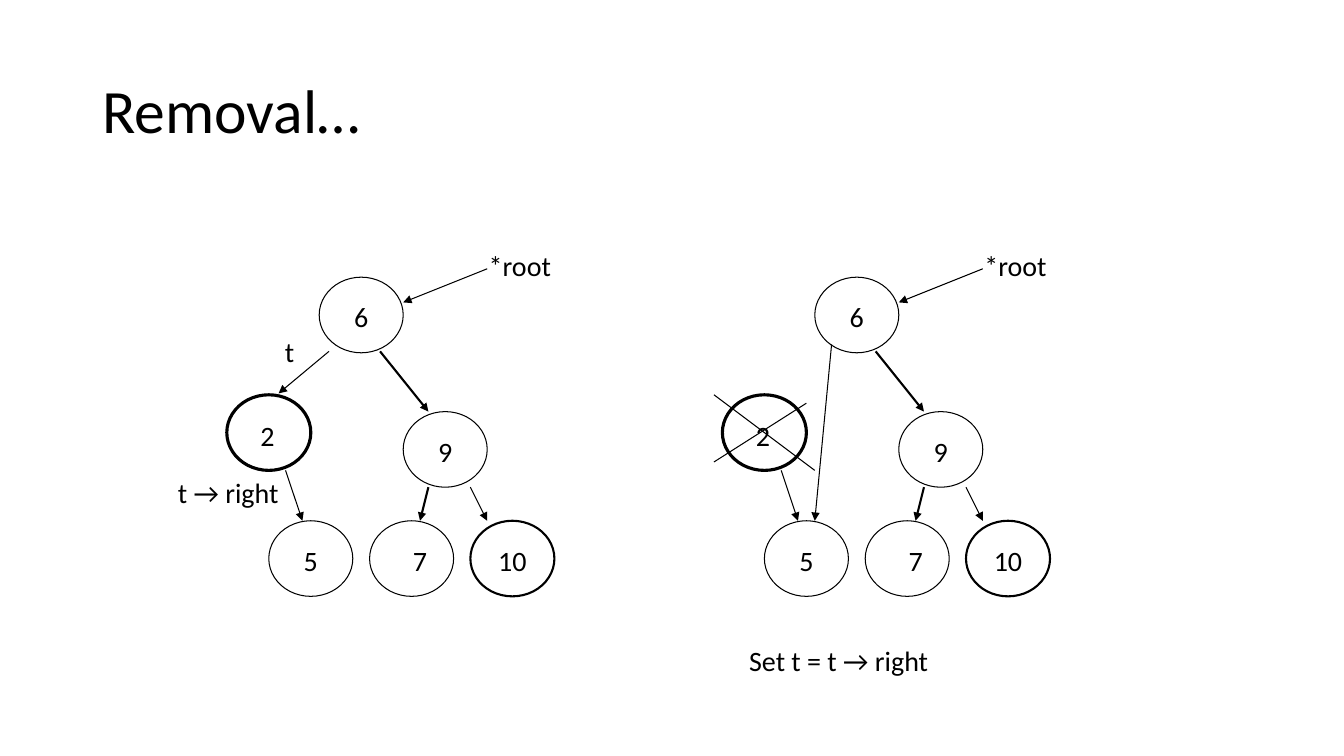
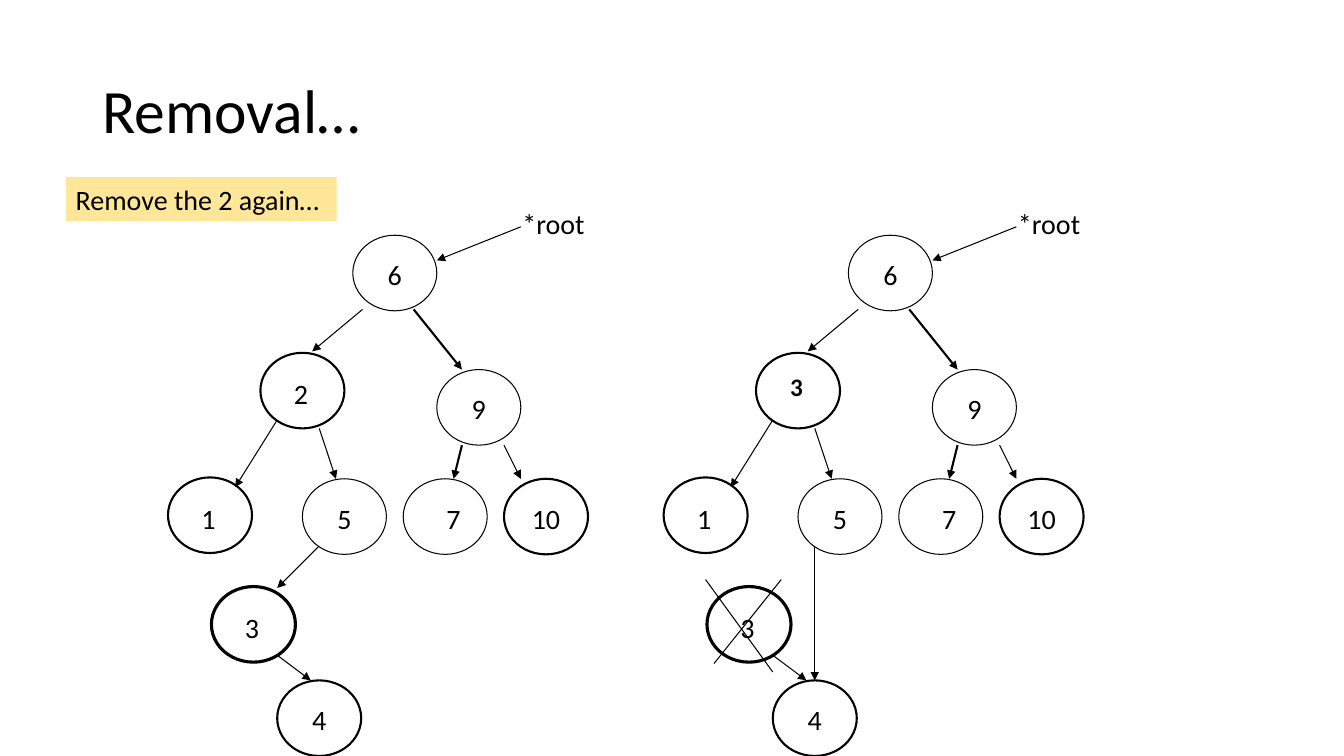
from dataclasses import dataclass, replace

import pptx
import pptx.dml.color
import pptx.enum.shapes
import pptx.enum.text
import pptx.oxml
import pptx.oxml.ns
import pptx.util

Pt = pptx.util.Pt
FONT = "Calibri"
BLACK = "000000"
CALLOUT = "FFE699"
THIN, MEDIUM, HEAVY = 0.75, 1.5, 2.25
NODE_W, NODE_H = 60, 54
BODY_SIZE, TITLE_SIZE = 20, 44
LEFT_TREE, TREE_GAP = 228, 354


@dataclass(frozen=True)
class Node:
    """A circle placed relative to the root circle; dx and dy shift its key."""
    key: str
    x: float
    y: float
    weight: float = THIN
    dx: float = 0
    dy: float = 1
    size: float = BODY_SIZE
    bold: bool = False


@dataclass(frozen=True)
class Line:
    """A line placed relative to the root circle."""
    x1: float
    y1: float
    x2: float
    y2: float
    weight: float = THIN
    arrow: bool = True


@dataclass(frozen=True)
class Tree:
    x: float
    y: float
    nodes: tuple[Node, ...]
    lines: tuple[Line, ...]


SIX = Node("6", 0, 0)
TWO = Node("2", -66, 84, MEDIUM, -1, 2)
COMMON_NODES = (
    SIX,
    Node("9", 60, 96),
    Node("5", -36, 174),
    Node("7", 36, 174, dx=6),
    Node("10", 108, 174, MEDIUM),
)
LOWER_NODES = (
    Node("1", -132, 173, MEDIUM, -1, 2),
    Node("3", -101, 251, HEAVY, -1, 2),
    Node("4", -54, 318, MEDIUM),
)

COMMON_LINES = (
    Line(120, -6, 60, 18),             # *root to 6
    Line(43.5, 53, 78, 96, MEDIUM),    # 6 to 9
    Line(-24, 138, -12, 174),          # left child to 5
    Line(78, 150, 72, 174, MEDIUM),    # 9 to 7
    Line(108, 150, 120, 174),          # 9 to 10
)
SIX_TO_LEFT = Line(7, 53, -29, 83)
LOWER_LINES = (
    SIX_TO_LEFT,
    Line(-54, 132, -84, 180),          # left child to 1
    Line(-54, 300, -30, 318),          # 3 to 4
)
FIVE_TO_THREE = Line(-24, 222, -54, 252)

SIX_TO_FIVE = Line(12, 48, 0, 174)
CROSS_OUT_TWO = (
    Line(-72, 84, 0, 138, arrow=False),
    Line(-6, 90, -72, 132, arrow=False),
)
FIVE_TO_FOUR = Line(-24, 222, -24, 318)
CROSS_OUT_THREE = (
    Line(-48, 246, -96, 306, arrow=False),
    Line(-102, 246, -54, 312, arrow=False),
)


def rgb(color: str) -> pptx.dml.color.RGBColor:
    return pptx.dml.color.RGBColor.from_string(color)


def add_run(p, text: str, size: float, bold: bool = False) -> None:
    r = p.add_run()
    r.text = text
    r.font.name = FONT
    r.font.size = Pt(size)
    r.font.bold = bold
    r.font.color.rgb = rgb(BLACK)


def add_title(s, text: str) -> None:
    tf = s.shapes.add_textbox(Pt(66), Pt(28.8), Pt(828), Pt(104.4)).text_frame
    tf.word_wrap = True
    tf.vertical_anchor = pptx.enum.text.MSO_ANCHOR.MIDDLE
    p = tf.paragraphs[0]
    p.line_spacing = 0.9
    add_run(p, text, TITLE_SIZE)


def add_label(s, text: str, x: float, y: float, w: float,
              fill: str | None = None) -> None:
    sp = s.shapes.add_textbox(Pt(x), Pt(y), Pt(w), Pt(31.5))
    if fill:
        sp.fill.solid()
        sp.fill.fore_color.rgb = rgb(fill)
    tf = sp.text_frame
    tf.word_wrap = False
    tf.auto_size = pptx.enum.text.MSO_AUTO_SIZE.SHAPE_TO_FIT_TEXT
    add_run(tf.paragraphs[0], text, BODY_SIZE)


def add_node(s, tree: Tree, node: Node) -> None:
    sp = s.shapes.add_shape(
        pptx.enum.shapes.MSO_SHAPE.OVAL,
        Pt(tree.x + node.x), Pt(tree.y + node.y), Pt(NODE_W), Pt(NODE_H))
    sp.shadow.inherit = False
    sp.fill.background()
    sp.line.color.rgb = rgb(BLACK)
    sp.line.width = Pt(node.weight)
    tf = sp.text_frame
    tf.word_wrap = False
    tf.vertical_anchor = pptx.enum.text.MSO_ANCHOR.MIDDLE
    # A margin on one side moves centred text by half its width.
    tf.margin_left = Pt(max(0, 2 * node.dx))
    tf.margin_right = Pt(max(0, -2 * node.dx))
    tf.margin_top = Pt(max(0, 2 * node.dy))
    tf.margin_bottom = Pt(max(0, -2 * node.dy))
    p = tf.paragraphs[0]
    p.alignment = pptx.enum.text.PP_ALIGN.CENTER
    add_run(p, node.key, node.size, node.bold)


def add_line(s, tree: Tree, line: Line) -> None:
    sp = s.shapes.add_connector(
        pptx.enum.shapes.MSO_CONNECTOR.STRAIGHT,
        Pt(tree.x + line.x1), Pt(tree.y + line.y1),
        Pt(tree.x + line.x2), Pt(tree.y + line.y2))
    sp.line.color.rgb = rgb(BLACK)
    sp.line.width = Pt(line.weight)
    qn = pptx.oxml.ns.qn
    if line.arrow:
        head = sp.line._get_or_add_ln().makeelement(
            qn("a:tailEnd"), {"type": "triangle"})
        sp.line._get_or_add_ln().append(head)
    sp_pr = sp._element.spPr
    sp_pr.append(sp_pr.makeelement(qn("a:effectLst"), {}))


def add_tree(s, tree: Tree) -> None:
    for node in tree.nodes:
        add_node(s, tree, node)
    for line in tree.lines:
        add_line(s, tree, line)
    add_label(s, "*root", tree.x + 114, tree.y - 24, 60)


def add_removal_slide(prs, trees: tuple[Tree, ...]):
    s = prs.slides.add_slide(prs.slide_layouts[6])
    add_title(s, "Removal…")
    for tree in trees:
        add_tree(s, tree)
    return s


def build_one_child(prs) -> None:
    nodes = COMMON_NODES + (replace(TWO, weight=HEAVY),)
    y = 198
    before = Tree(LEFT_TREE, y, nodes, COMMON_LINES + (SIX_TO_LEFT,))
    after = Tree(LEFT_TREE + TREE_GAP, y, nodes,
                 COMMON_LINES + (SIX_TO_FIVE,) + CROSS_OUT_TWO)
    s = add_removal_slide(prs, (before, after))
    add_label(s, "t", 196.5, 235.5, 21.5)
    add_label(s, "t → right", 120, 336, 88.5)
    add_label(s, "Set t = t → right", 528, 456, 144.5)


def build_two_children(prs) -> None:
    nodes = COMMON_NODES + LOWER_NODES
    lines = COMMON_LINES + LOWER_LINES
    x, y = LEFT_TREE + 24, 168
    moved_three = replace(TWO, key="3", dy=-3, size=18, bold=True)
    before = Tree(x, y, nodes + (TWO,), lines + (FIVE_TO_THREE,))
    after = Tree(x + TREE_GAP, y, nodes + (moved_three,),
                 lines + (FIVE_TO_FOUR,) + CROSS_OUT_THREE)
    s = add_removal_slide(prs, (before, after))
    add_label(s, "Remove the 2 again…", 47, 126.5, 193.5, CALLOUT)


def main() -> None:
    prs = pptx.Presentation()
    prs.slide_width, prs.slide_height = Pt(960), Pt(540)
    build_one_child(prs)
    build_two_children(prs)
    prs.save("out.pptx")


if __name__ == "__main__":
    main()
